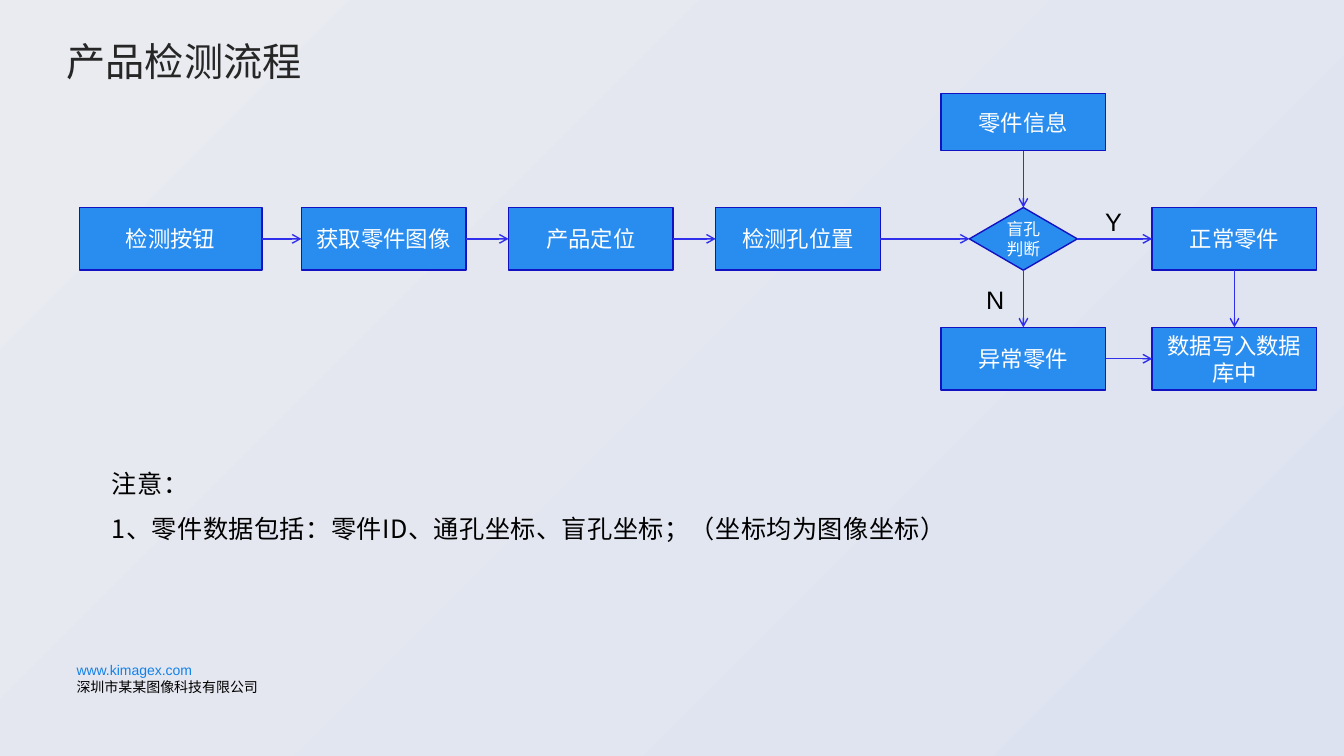
from lxml import etree
from pptx import Presentation
from pptx.dml.color import RGBColor
from pptx.enum.shapes import MSO_CONNECTOR, MSO_SHAPE
from pptx.enum.text import MSO_ANCHOR, PP_ALIGN
from pptx.oxml.ns import qn
from pptx.util import Cm, Pt

RECT, DECISION = MSO_SHAPE.RECTANGLE, MSO_SHAPE.FLOWCHART_DECISION
STRAIGHT = MSO_CONNECTOR.STRAIGHT
LEFT, CENTER = PP_ALIGN.LEFT, PP_ALIGN.CENTER
TOP_ANCHOR, MIDDLE = MSO_ANCHOR.TOP, MSO_ANCHOR.MIDDLE
TOP, WEST, BOTTOM, EAST = range(4)  # connection sites


class Theme:
    latin, cjk = "Arial", "Noto Sans CJK SC"
    bg_start, bg_end = "EAEBF0", "DDE2F1"
    fill, border, arrow = "298DEF", "1212C2", "2F2FEC"
    white, black, title, link = "FFFFFF", "000000", "262626", "1181E9"
    title_size, note_size, box_size, decision_size, footer_size = 28, 18, 16, 12, 10
    line_width = 1


def rgb(value):
    return RGBColor.from_string(value)


def write(sp, text, size, color=Theme.black, font=Theme.latin, align=LEFT, anchor=TOP_ANCHOR,
          inset=(0.25, 0.13), wrap=True, first_indent=0, spacing=None, tracking=0):
    """Add the lines of text to a shape; color may be a list with one entry per line."""
    tf = sp.text_frame
    tf.word_wrap, tf.vertical_anchor = wrap, anchor
    tf.margin_left = tf.margin_right = Cm(inset[0])
    tf.margin_top = tf.margin_bottom = Cm(inset[1])
    for i, line in enumerate(text.split("\n")):
        p = tf.add_paragraph() if i else tf.paragraphs[0]
        p.alignment = align
        if spacing:
            p.line_spacing = spacing
        if first_indent:
            p._p.get_or_add_pPr().set("indent", str(Cm(first_indent)))
        r = p.add_run()
        r.text = line
        r.font.size, r.font.name = Pt(size), font
        r.font.color.rgb = rgb(color[i] if isinstance(color, list) else color)
        rPr = r.font._element
        etree.SubElement(rPr, qn("a:ea")).set("typeface", Theme.cjk)
        if tracking:
            rPr.set("spc", str(tracking))


prs = Presentation()
prs.slide_width, prs.slide_height = Cm(33.87), Cm(19.05)
s = prs.slides.add_slide(prs.slide_layouts[6])

# Background
bg = s.shapes.add_shape(RECT, 0, 0, prs.slide_width, prs.slide_height)
bg.shadow.inherit = False
bg.line.fill.background()
bg.fill.gradient()
bg.fill.gradient_angle = 315
for stop, color in zip(bg.fill.gradient_stops, (Theme.bg_start, Theme.bg_end)):
    stop.color.rgb = rgb(color)

# Footer, title and notes
tb = s.shapes.add_textbox(Cm(1.68), Cm(16.54), Cm(5.6), Cm(1.12))
write(tb, "www.kimagex.com\n深圳市某某图像科技有限公司", Theme.footer_size,
      color=[Theme.link, Theme.black])
tb = s.shapes.add_textbox(Cm(1.68), Cm(0.94), Cm(5.92), Cm(1.19))
write(tb, "产品检测流程", Theme.title_size, color=Theme.title, font=Theme.cjk,
      inset=(0, 0), wrap=False)
tb = s.shapes.add_textbox(Cm(1.68), Cm(11.28), Cm(29.24), Cm(5.2))
write(tb, "注意：\n1、零件数据包括：零件ID、通孔坐标、盲孔坐标；（坐标均为图像坐标）",
      Theme.note_size, font=Theme.cjk, first_indent=0.89, spacing=1.5, tracking=30)

# Flow boxes: text, centre x, centre y, width, height
BOX_W, BOX_H = 4.15, 1.58
MAIN_Y, LOWER_Y = 6.02, 9.04
FETCH_X, STEP = 9.67, 5.22
CHECK_X, RESULT_X = 25.79, 31.11
boxes = {}
for text, x, y, w, h in [
    ("零件信息", CHECK_X, 3.08, BOX_W, 1.44),
    ("检测按钮", 4.3, MAIN_Y, 4.6, BOX_H),
    ("获取零件图像", FETCH_X, MAIN_Y, BOX_W, BOX_H),
    ("产品定位", FETCH_X + STEP, MAIN_Y, BOX_W, BOX_H),
    ("检测孔位置", FETCH_X + 2 * STEP, MAIN_Y, BOX_W, BOX_H),
    ("盲孔判断", CHECK_X, MAIN_Y, 2.72, BOX_H),
    ("正常零件", RESULT_X, MAIN_Y, BOX_W, BOX_H),
    ("异常零件", CHECK_X, LOWER_Y, BOX_W, BOX_H),
    ("数据写入数据库中", RESULT_X, LOWER_Y, BOX_W, BOX_H),
]:
    is_check = text == "盲孔判断"
    sp = s.shapes.add_shape(DECISION if is_check else RECT,
                            Cm(x - w / 2), Cm(y - h / 2), Cm(w), Cm(h))
    sp.shadow.inherit = False
    sp.fill.solid()
    sp.fill.fore_color.rgb = rgb(Theme.fill)
    sp.line.color.rgb = rgb(Theme.border)
    sp.line.width = Pt(Theme.line_width)
    write(sp, text, Theme.decision_size if is_check else Theme.box_size, color=Theme.white,
          align=CENTER, anchor=MIDDLE, inset=(0.15, 0) if is_check else (0.25, 0.13))
    boxes[text] = sp

# Arrows between the boxes
for start, start_site, end, end_site in [
    ("检测按钮", EAST, "获取零件图像", WEST),
    ("获取零件图像", EAST, "产品定位", WEST),
    ("产品定位", EAST, "检测孔位置", WEST),
    ("检测孔位置", EAST, "盲孔判断", WEST),
    ("零件信息", BOTTOM, "盲孔判断", TOP),
    ("盲孔判断", EAST, "正常零件", WEST),
    ("盲孔判断", BOTTOM, "异常零件", TOP),
    ("正常零件", BOTTOM, "数据写入数据库中", TOP),
    ("异常零件", EAST, "数据写入数据库中", WEST),
]:
    cx = s.shapes.add_connector(STRAIGHT, 0, 0, 0, 0)
    cx.begin_connect(boxes[start], start_site)
    cx.end_connect(boxes[end], end_site)
    cx.line.color.rgb = rgb(Theme.arrow)
    cx.line.width = Pt(Theme.line_width)
    etree.SubElement(cx.line._get_or_add_ln(), qn("a:tailEnd")).set("type", "arrow")
    etree.SubElement(cx._element.spPr, qn("a:effectLst"))

# Branch labels
for text, x, y in [("Y", 27.41, 5.23), ("N", 24.43, 7.19)]:
    tb = s.shapes.add_textbox(Cm(x), Cm(y), Cm(1.3), Cm(0.69))
    write(tb, text, Theme.note_size, align=CENTER, anchor=MIDDLE)

prs.save("out.pptx")
